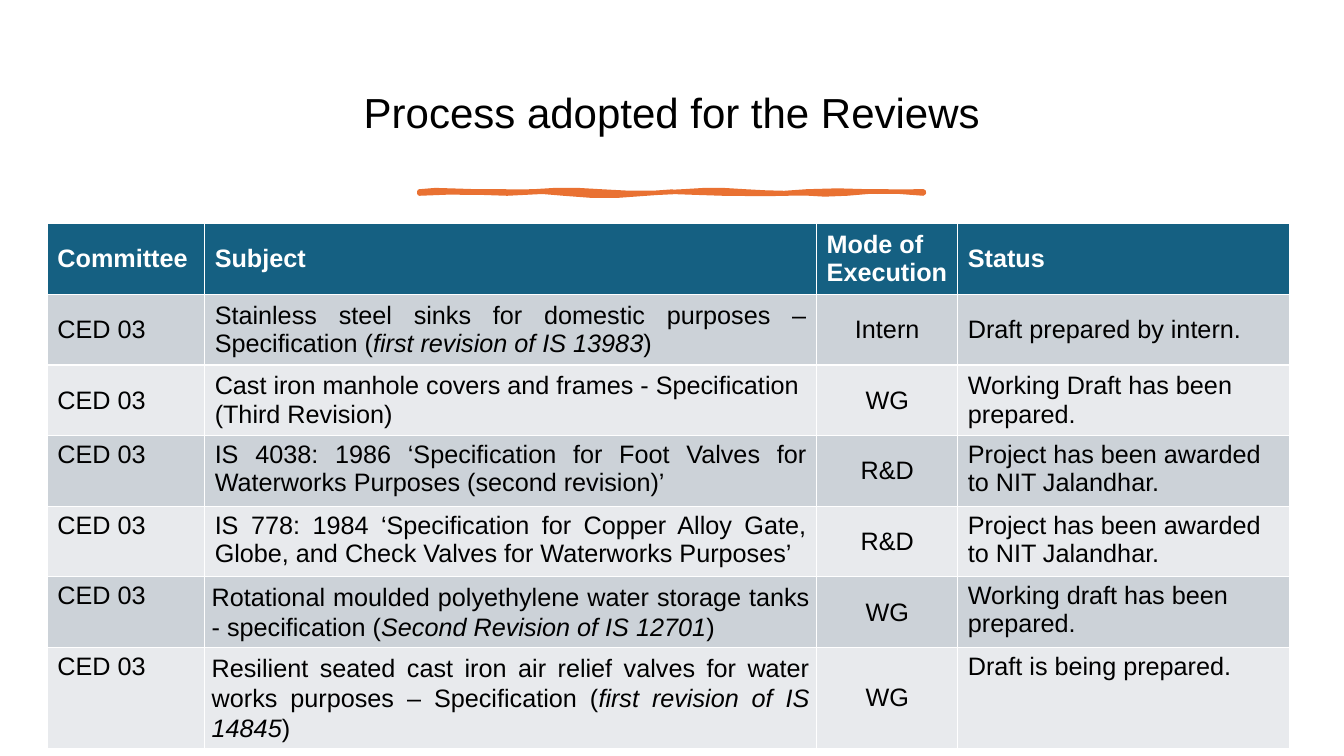
from pptx import Presentation
from pptx.dml.color import RGBColor
from pptx.enum.text import MSO_ANCHOR, PP_ALIGN
from pptx.util import Inches, Pt

LEFT, MID, JUST = PP_ALIGN.LEFT, PP_ALIGN.CENTER, PP_ALIGN.JUSTIFY


def color(text):
    return RGBColor.from_string(text)


def write(para, text, **form):
    run = para.add_run()
    run.text = text
    look = {"name": "Arial", "size": Pt(18), "bold": False} | form
    tint = look.pop("tint", "000000")
    for key, value in look.items():
        setattr(run.font, key, value)
    run.font.color.rgb = color(tint)


deck = Presentation()
deck.slide_width, deck.slide_height = Inches(13.33), Inches(7.5)
slide = deck.slides.add_slide(deck.slide_layouts[6])

# Title
box = slide.shapes.add_textbox(Inches(0.7), Inches(0.46), Inches(11.93), Inches(1.37))
frame = box.text_frame
frame.word_wrap = True
frame.vertical_anchor = MSO_ANCHOR.MIDDLE
para = frame.paragraphs[0]
para.alignment, para.line_spacing = MID, 0.9
write(para, "Process adopted for the Reviews", size=Pt(30))

# Brush stroke: each curve has two handles and an end point
start = (4.16, 1.9)
curves = [
    (4.28, 1.87, 4.54, 1.9, 4.73, 1.9), (4.92, 1.89, 5.09, 1.91, 5.29, 1.9),
    (5.49, 1.88, 5.74, 1.88, 5.96, 1.9), (6.17, 1.92, 6.53, 1.92, 6.77, 1.9),
    (7.02, 1.88, 7.14, 1.88, 7.39, 1.9), (7.63, 1.91, 7.74, 1.93, 8, 1.9),
    (8.26, 1.87, 8.67, 1.92, 9.16, 1.9), (9.17, 1.91, 9.16, 1.91, 9.16, 1.92),
    (8.95, 1.9, 8.65, 1.88, 8.4, 1.92), (8.15, 1.95, 8.01, 1.9, 7.79, 1.92),
    (7.56, 1.93, 7.47, 1.92, 7.17, 1.92), (6.87, 1.92, 6.67, 1.88, 6.41, 1.92),
    (6.14, 1.95, 5.85, 1.95, 5.59, 1.92), (5.34, 1.88, 5.23, 1.92, 5.03, 1.92),
    (4.83, 1.91, 4.38, 1.9, 4.16, 1.92),
]
dots, last, steps = [], start, 3
for curve in curves:
    knots = [last, curve[:2], curve[2:4], curve[4:]]
    for step in range(1, steps + 1):
        t = step / steps
        parts = ((1 - t) ** 3, 3 * t * (1 - t) ** 2, 3 * t * t * (1 - t), t ** 3)
        dots.append(tuple(Inches(sum(w * k[axis] for w, k in zip(parts, knots)))
                          for axis in (0, 1)))
    last = knots[3]
pen = slide.shapes.build_freeform(Inches(start[0]), Inches(start[1]))
pen.add_line_segments(dots, close=True)
stroke = pen.convert_to_shape()
stroke.shadow.inherit = False
stroke.fill.solid()
stroke.fill.fore_color.rgb = color("E97132")
stroke.line.color.rgb = color("E97132")
stroke.line.width = Pt(3.25)

# Table text; a subject is plain text, then an italic part in brackets
heads = ["Committee", "Subject", "Mode of Execution", "Status"]
award = "Project has been awarded to NIT Jalandhar."
items = [
    ("Stainless steel sinks for domestic purposes – Specification",
     "first revision of IS 13983", "Intern", "Draft prepared by intern."),
    ("Cast iron manhole covers and frames - Specification (Third Revision)",
     "", "WG", "Working Draft has been prepared."),
    ("IS 4038: 1986 ‘Specification for Foot Valves for Waterworks Purposes "
     "(second revision)’", "", "R&D", award),
    ("IS 778: 1984 ‘Specification for Copper Alloy Gate, Globe, and Check Valves "
     "for Waterworks Purposes’", "", "R&D", award),
    ("Rotational moulded polyethylene water storage tanks - specification",
     "Second Revision of IS 12701", "WG", "Working draft has been prepared."),
    ("Resilient seated cast iron air relief valves for water works purposes – "
     "Specification", "first revision of IS 14845", "WG", "Draft is being prepared."),
]
rows = [heads] + [["CED 03", (name, note), mode, state]
                  for name, note, mode, state in items]
tight = {(5, 1), (5, 2), (6, 1)}
high = {(r, c) for r in range(3, 7) for c in (0, 3)} | {(3, 1), (4, 1)}

# Table grid: rows grow to fit their text
widths = [1.56, 6.07, 1.4, 3.29]
grid = slide.shapes.add_table(len(rows), len(widths), Inches(0.47), Inches(2.22),
                              Inches(sum(widths)), Inches(0))
table = grid.table
for col, width in zip(table.columns, widths):
    col.width = Inches(width)
grid.height = Inches(5.2)

# Table cells
for r, row in enumerate(rows):
    for c, text in enumerate(row):
        cell = table.cell(r, c)
        cell.vertical_anchor = MSO_ANCHOR.TOP if (r, c) in high else MSO_ANCHOR.MIDDLE
        cell.fill.solid()
        cell.fill.fore_color.rgb = color(
            "156082" if r == 0 else "CCD2D8" if r % 2 else "E8EAED")
        para = cell.text_frame.paragraphs[0]
        para.alignment = LEFT if r == 0 else (LEFT, LEFT if r == 2 else JUST, MID, LEFT)[c]
        if (r, c) in tight:
            para.line_spacing = 1.07
            cell.margin_left = cell.margin_right = Inches(0.07)
            cell.margin_top = cell.margin_bottom = Inches(0.02)
        if r == 0:
            write(para, text, bold=True, tint="FFFFFF")
        elif c == 1 and text[1]:
            write(para, text[0] + " (")
            write(para, text[1], italic=True)
            write(para, ")")
        else:
            write(para, text[0] if c == 1 else text)

deck.save("out.pptx")
